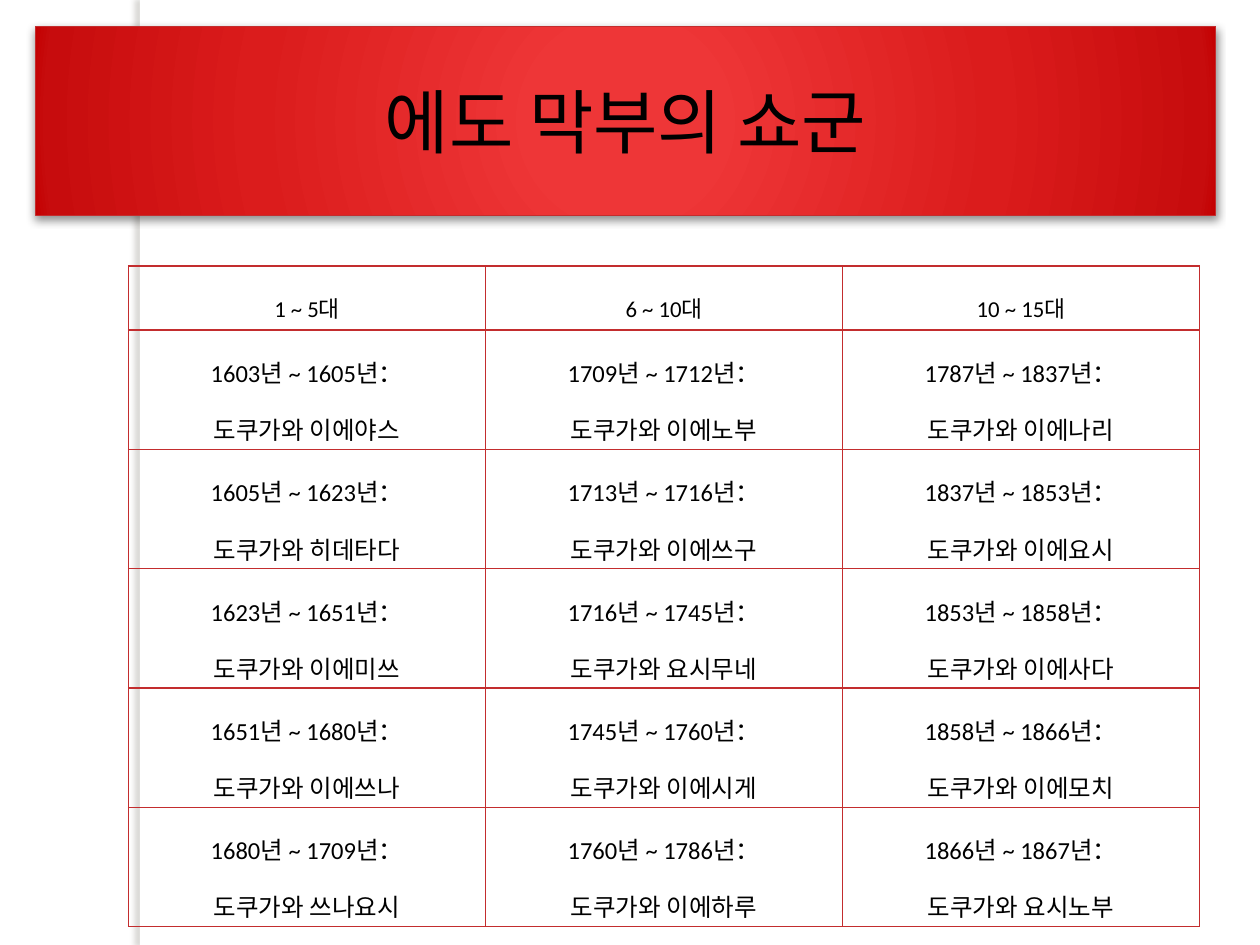
from dataclasses import dataclass

from lxml import etree
from pptx import Presentation
from pptx.dml.color import RGBColor
from pptx.enum.shapes import MSO_SHAPE
from pptx.enum.text import MSO_ANCHOR, MSO_AUTO_SIZE, PP_ALIGN
from pptx.oxml import parse_xml
from pptx.oxml.ns import qn
from pptx.util import Inches, Pt

RECT = MSO_SHAPE.RECTANGLE
MIDDLE = MSO_ANCHOR.MIDDLE
CENTER = PP_ALIGN.CENTER
NO_FIT = MSO_AUTO_SIZE.NONE
TITLE_ONLY = 5
WIDE, HIGH = Inches(10), Inches(7.5)
XMLNS = 'xmlns:a="http://schemas.openxmlformats.org/drawingml/2006/main"'


@dataclass(frozen=True)
class Theme:
    font: str = "Calibri"
    ink: str = "000000"
    paper: str = "FFFFFF"
    line: str = "C32D2E"
    shade: str = "736F63"
    glow: tuple = ((0, "EF3737"), (15, "EE3637"), (62, "DB1C1C"),
                   (97, "C70C0D"), (100, "C30001"))
    title: int = 40
    head: int = 13
    body: int = 14


THEME = Theme()
HEADS = ("1 ~ 5대", "6 ~ 10대", "10 ~ 15대")
REIGNS = (
    ((1603, 1605, "이에야스"), (1709, 1712, "이에노부"), (1787, 1837, "이에나리")),
    ((1605, 1623, "히데타다"), (1713, 1716, "이에쓰구"), (1837, 1853, "이에요시")),
    ((1623, 1651, "이에미쓰"), (1716, 1745, "요시무네"), (1853, 1858, "이에사다")),
    ((1651, 1680, "이에쓰나"), (1745, 1760, "이에시게"), (1858, 1866, "이에모치")),
    ((1680, 1709, "쓰나요시"), (1760, 1786, "이에하루"), (1866, 1867, "요시노부")),
)


def across(share):
    return round(WIDE * share / 100)


def down(share):
    return round(HIGH * share / 100)


def box(left, top, width, height):
    return across(left), down(top), across(width), down(height)


def style(frame, size, space=None):
    for para in frame.paragraphs:
        para.alignment = CENTER
        para.line_spacing = space
        for run in para.runs:
            run.font.name = THEME.font
            run.font.size = Pt(size)
            run.font.color.rgb = RGBColor.from_string(THEME.ink)


def cast(shape, color, alpha, blur, reach, angle):
    props = shape.element.spPr
    for old in props.findall(qn("a:effectLst")):
        props.remove(old)
    props.append(parse_xml(
        f'<a:effectLst {XMLNS}><a:outerShdw blurRad="{Pt(blur)}" dist="{Pt(reach)}" '
        f'dir="{angle * 60000}" algn="ctr" rotWithShape="0"><a:srgbClr val="{color}">'
        f'<a:alpha val="{alpha * 1000}"/></a:srgbClr></a:outerShdw></a:effectLst>'))


def add_strip(slide):
    strip = slide.shapes.add_shape(RECT, *box(11.1, 0, 0.8, 100))
    strip.fill.solid()
    strip.fill.fore_color.rgb = RGBColor.from_string(THEME.paper)
    strip.line.fill.background()
    cast(strip, THEME.shade, 25, 3, 3, 180)
    slide.shapes.element.insert(2, strip.element)


def add_ribbon(slide, text):
    title = slide.shapes.title
    title.left, title.top, title.width, title.height = box(2.8, 2.8, 93.7, 20)
    stops = "".join(f'<a:gs pos="{spot * 1000}"><a:srgbClr val="{color}"/></a:gs>'
                    for spot, color in THEME.glow)
    props = title.element.spPr
    props.append(parse_xml(f'<a:prstGeom {XMLNS} prst="ribbon2"><a:avLst/></a:prstGeom>'))
    props.append(parse_xml(
        f'<a:gradFill {XMLNS} rotWithShape="1"><a:gsLst>{stops}</a:gsLst>'
        '<a:path path="circle"><a:fillToRect l="50000" t="50000" r="50000" b="50000"/>'
        '</a:path></a:gradFill>'))
    title.line.color.rgb = RGBColor.from_string(THEME.line)
    title.line.width = Pt(0.75)
    cast(title, THEME.ink, 43, 5, 2, 90)
    frame = title.text_frame
    frame.text = text
    frame.auto_size = NO_FIT
    frame.vertical_anchor = MIDDLE
    style(frame, THEME.title)


def edge(cell):
    props = cell._tc.get_or_add_tcPr()
    for side in ("lnL", "lnR", "lnT", "lnB"):
        line = etree.SubElement(props, qn(f"a:{side}"), w=str(Pt(1)))
        fill = etree.SubElement(line, qn("a:solidFill"))
        etree.SubElement(fill, qn("a:srgbClr"), val=THEME.line)


def set_cell(cell, text, size):
    edge(cell)
    cell.fill.background()
    cell.margin_left = cell.margin_right = Inches(0.07)
    cell.margin_top = cell.margin_bottom = Inches(0.02)
    cell.vertical_anchor = MIDDLE
    cell.text_frame.text = text
    style(cell.text_frame, size, 1.6)


def add_reigns(slide):
    rows = [HEADS] + [[f"{start}년 ~ {end}년：\n도쿠가와 {name}" for start, end, name in row]
                      for row in REIGNS]
    table = slide.shapes.add_table(len(rows), len(HEADS), *box(10.2, 28.13, 85, 66.13)).table
    table.first_row = table.horz_banding = False
    for r, row in enumerate(rows):
        table.rows[r].height = down(11.87 if r else 6.8)
        for c, text in enumerate(row):
            set_cell(table.cell(r, c), text, THEME.body if r else THEME.head)


def main():
    deck = Presentation()
    deck.slide_width, deck.slide_height = WIDE, HIGH
    slide = deck.slides.add_slide(deck.slide_layouts[TITLE_ONLY])
    add_strip(slide)
    add_ribbon(slide, "에도 막부의 쇼군")
    add_reigns(slide)
    deck.save("out.pptx")


if __name__ == "__main__":
    main()
